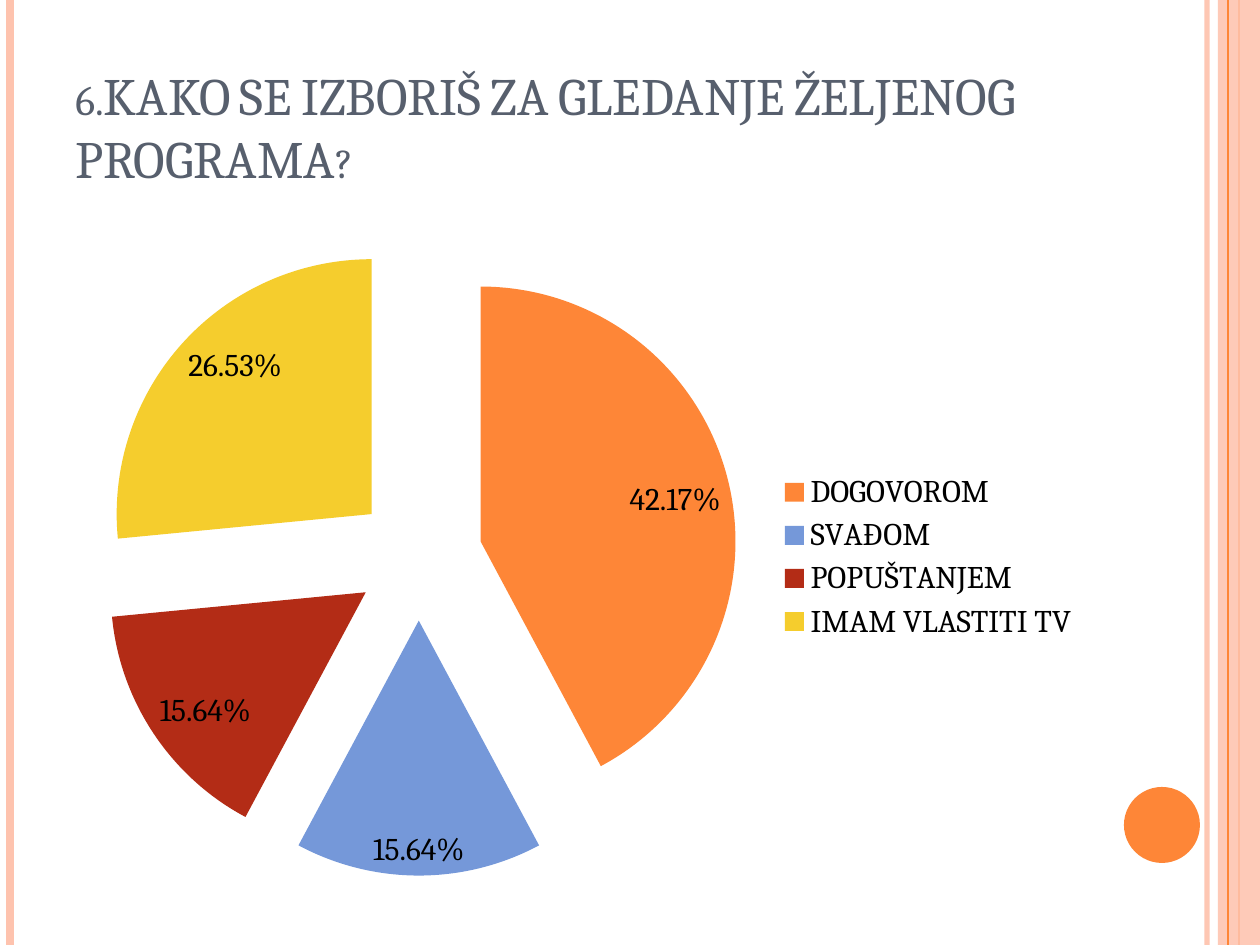
from lxml import etree
from pptx import Presentation
from pptx.chart.data import CategoryChartData
from pptx.dml.color import RGBColor
from pptx.enum.chart import XL_CHART_TYPE, XL_LABEL_POSITION, XL_LEGEND_POSITION
from pptx.enum.shapes import MSO_CONNECTOR, MSO_SHAPE
from pptx.enum.text import MSO_ANCHOR
from pptx.oxml.ns import qn
from pptx.util import Pt

PIE = XL_CHART_TYPE.PIE
INSIDE = XL_LABEL_POSITION.INSIDE_END
RIGHT = XL_LEGEND_POSITION.RIGHT
LINE = MSO_CONNECTOR.STRAIGHT
RECT = MSO_SHAPE.RECTANGLE
OVAL = MSO_SHAPE.OVAL
BOTTOM = MSO_ANCHOR.BOTTOM

BLACK = RGBColor(0x00, 0x00, 0x00)
SLATE = RGBColor(0x57, 0x5F, 0x6D)
PEACH = RGBColor(0xFE, 0xC3, 0xAE)
ORANGE = RGBColor(0xFE, 0x86, 0x37)
BLUE = RGBColor(0x75, 0x98, 0xD9)
RED = RGBColor(0xB3, 0x2C, 0x16)
YELLOW = RGBColor(0xF5, 0xCD, 0x2D)

FONT = "Cambria"
WIDTH, HEIGHT = 1260, 945
SCALE = 914400 / 126


def emu(*sizes):
    return [round(size * SCALE) for size in sizes]


def fade(shape, alpha):
    for color in shape._element.spPr.iter(qn("a:srgbClr")):
        etree.SubElement(color, qn("a:alpha")).set("val", str(alpha * 1000))


class Painter:
    def __init__(self, slide, font):
        self.slide = slide
        self.shapes = slide.shapes
        self.font = font

    def style(self, font, size, color):
        font.name = self.font
        font.size = Pt(size)
        font.color.rgb = color

    def stripe(self, x, color, weight, alpha=100):
        line = self.shapes.add_connector(LINE, *emu(x, 0, x, HEIGHT))
        line.line.color.rgb = color
        line.line.width = Pt(weight)
        etree.SubElement(line._element.spPr, qn("a:effectLst"))
        if alpha < 100:
            fade(line, alpha)

    def shape(self, kind, box, color, alpha=100):
        shape = self.shapes.add_shape(kind, *emu(*box))
        shape.shadow.inherit = False
        shape.fill.solid()
        shape.fill.fore_color.rgb = color
        shape.line.fill.background()
        if alpha < 100:
            fade(shape, alpha)

    def title(self, box, text, size, color):
        frame = self.shapes.add_textbox(*emu(*box)).text_frame
        frame.word_wrap = True
        frame.vertical_anchor = BOTTOM
        run = frame.paragraphs[0].add_run()
        run.text = text
        self.style(run.font, size, color)
        run._r.get_or_add_rPr().set("cap", "small")

    def pie(self, box, rows, size, burst):
        data = CategoryChartData(number_format="0.00%")
        data.categories = [name for name, _, _ in rows]
        data.add_series("Series 1", [value for _, value, _ in rows])
        chart = self.shapes.add_chart(PIE, *emu(*box), data).chart
        self.style(chart.font, size, BLACK)
        chart.has_title = False
        chart.has_legend = True
        chart.legend.position = RIGHT
        chart.legend.include_in_layout = False
        plot = chart.plots[0]
        plot.vary_by_categories = True
        plot.has_data_labels = True
        labels = plot.data_labels
        labels.show_value = True
        labels.show_percentage = False
        labels.number_format = "0.00%"
        labels.number_format_is_linked = False
        labels.position = INSIDE
        series = plot.series[0]
        for index, (_, _, color) in enumerate(rows):
            fill = series.points[index].format.fill
            fill.solid()
            fill.fore_color.rgb = color
        gap = etree.Element(qn("c:explosion"))
        gap.set("val", str(burst))
        series._element.find(qn("c:dPt")).addprevious(gap)


def main():
    deck = Presentation()
    deck.slide_width, deck.slide_height = emu(WIDTH, HEIGHT)
    page = Painter(deck.slides.add_slide(deck.slide_layouts[6]), FONT)

    page.stripe(1207, PEACH, 3, 93)
    page.stripe(10, PEACH, 4.5)
    page.stripe(1239, ORANGE, 1.5)
    page.shape(RECT, (1218, 0, 42, HEIGHT), PEACH, 87)
    page.stripe(1228, ORANGE, 0.75)
    page.shape(OVAL, (1124, 787, 76, 76), ORANGE)

    page.title((63, 38, 1029, 157),
               "6.KAKO SE IZBORIŠ ZA GLEDANJE ŽELJENOG PROGRAMA?", 30, SLATE)
    answers = [
        ("DOGOVOROM", 0.4217, ORANGE),
        ("SVAĐOM", 0.1564, BLUE),
        ("POPUŠTANJEM", 0.1564, RED),
        ("IMAM VLASTITI TV", 0.2653, YELLOW),
    ]
    page.pie((63, 221, 1029, 672), answers, 18, 25)
    deck.save("out.pptx")


if __name__ == "__main__":
    main()
